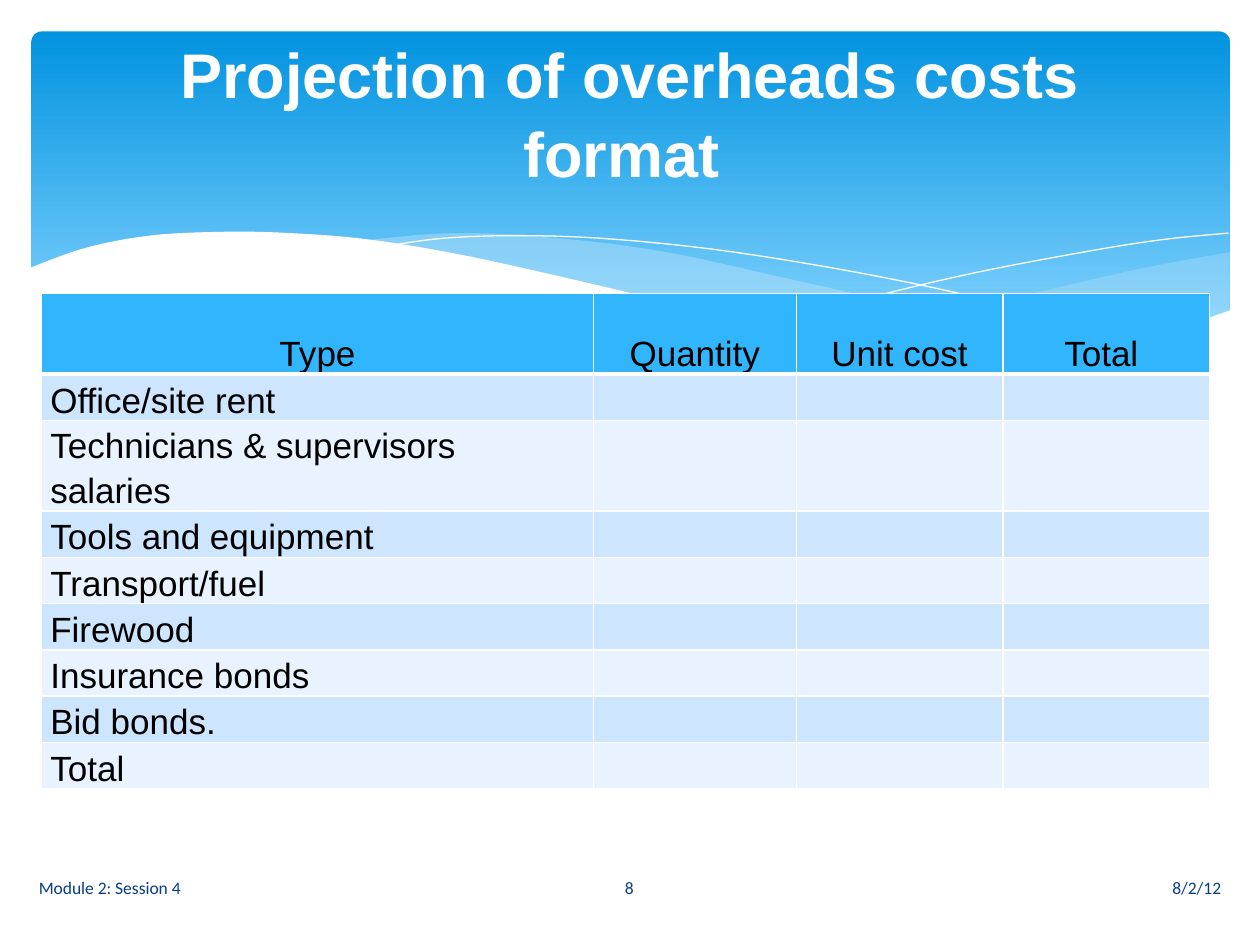
from collections import namedtuple
from dataclasses import dataclass

from lxml.etree import SubElement
from pptx import Presentation
from pptx.dml.color import RGBColor
from pptx.enum.shapes import MSO_SHAPE
from pptx.enum.text import MSO_ANCHOR, PP_ALIGN
from pptx.oxml.ns import qn
from pptx.util import Inches, Pt

COLS, ROWS = 100, 75
WIDE, HIGH = Inches(10), Inches(7.5)
Box = namedtuple("Box", "x y w h")


@dataclass(frozen=True)
class Theme:
    white: str = "FFFFFF"
    black: str = "000000"
    deep: str = "0293E0"
    sky: str = "83D3FE"
    mist: str = "C6E7FC"
    navy: str = "073E87"
    head: str = "31B6FD"
    bands: tuple = ("CEE5FE", "E8F3FF")
    sans: str = "Arial"
    small: str = "Calibri"
    title: int = 36
    body: int = 20
    note: int = 10


THEME = Theme()

# Edges of the waves, in grid cells from the corner of the banner
RIGHT = ([(63.6, 24), (72.8, 22.3), (80.7, 20.5), (88.1, 18.8), (95.1, 17.5)],
         [(95.1, 22.2), (90.3, 23.8), (84.7, 24.9), (77.8, 25.3),
          (70.7, 24.9), (63.6, 24)])
MIDDLE = ([(26.1, 16.6), (33.6, 16), (41.7, 16.4), (50.3, 17.5), (60.4, 19.7),
           (71.6, 22.2), (78.2, 23.5), (86.8, 24.8)],
          [(86.8, 24.8), (77.1, 25.3), (68.4, 24.7), (59.3, 23.3),
           (50.5, 21.5), (42.4, 19.7), (33.7, 17.8), (26.1, 16.6)])
FALL = [(28.4, 17), (32.8, 16.4), (39.1, 16.2), (46.4, 16.5), (55.7, 17.5),
        (67, 19.4), (77, 21.6), (88.2, 24.7)]
RISE = [(58.8, 23.2), (67, 21), (75.1, 19.1), (84.1, 17.4), (89.9, 16.5),
        (95, 16)]
FRONT = ([(95.2, 22.1), (89.5, 24), (83.8, 24.9), (78.4, 25.2), (70.1, 24.7),
          (60.1, 23.3), (50.4, 21.4), (42.2, 19.5), (34, 17.7), (26.7, 16.5),
          (20.5, 16), (15.2, 15.9), (9.4, 16.2), (4.2, 17.2), (-0.2, 18.8)],
         [(-0.2, 30.4), (95.2, 30.4)])

HEADS = ["Type", "Quantity", "Unit cost", "Total "]
ITEMS = ["Office/site rent", "Technicians & supervisors salaries",
         "Tools and equipment", "Transport/fuel", "Firewood",
         "Insurance bonds", "Bid bonds.", "Total"]


def across(n):
    return round(n * WIDE / COLS)


def down(n):
    return round(n * HIGH / ROWS)


def place(box):
    return across(box.x), down(box.y), across(box.w), down(box.h)


def color(code):
    return RGBColor.from_string(code)


def write(frame, text, size=THEME.body, ink=THEME.black, font=THEME.sans,
          bold=False, align=PP_ALIGN.LEFT, gap=None):
    para = frame.paragraphs[0]
    para.alignment = align
    para.line_spacing = gap
    run = para.add_run()
    run.text = text
    run.font.size, run.font.name, run.font.bold = Pt(size), font, bold
    run.font.color.rgb = color(ink)


def label(slide, box, text, side=1, foot=0.5, **style):
    frame = slide.shapes.add_textbox(*place(box)).text_frame
    frame.word_wrap = True
    frame.vertical_anchor = MSO_ANCHOR.MIDDLE
    frame.margin_left = frame.margin_right = across(side)
    frame.margin_top, frame.margin_bottom = 0, down(foot)
    write(frame, text, **style)


def smooth(keys, steps=6):
    """Points of a Catmull-Rom curve through the keys."""
    pads = [keys[0], *keys, keys[-1]]
    curve = [keys[0]]
    for a, b, c, d in zip(pads, pads[1:], pads[2:], pads[3:]):
        for t in (i / steps for i in range(1, steps + 1)):
            curve.append(tuple(
                q + t * (r - p) / 2 + t * t * (2 * p - 5 * q + 4 * r - s) / 2
                + t ** 3 * (3 * q - p - 3 * r + s) / 2
                for p, q, r, s in zip(a, b, c, d)))
    return curve


def wave(slide, box, points, fill=None, alpha=100):
    spots = [(across(box.x + x), down(box.y + y)) for x, y in points]
    pen = slide.shapes.build_freeform(*spots[0])
    pen.add_line_segments(spots[1:], close=bool(fill))
    shape = pen.convert_to_shape()
    shape.shadow.inherit = False
    if fill:
        shape.fill.solid()
        shape.fill.fore_color.rgb = color(fill)
        tint = shape.fill._xPr.find(".//" + qn("a:srgbClr"))
        SubElement(tint, qn("a:alpha"), val=str(alpha * 1000))
        shape.line.fill.background()
    else:
        shape.fill.background()
        shape.line.color.rgb = color(THEME.white)
        shape.line.width = Pt(0)


def banner(slide, box):
    # Gradient panel
    panel = slide.shapes.add_shape(MSO_SHAPE.ROUNDED_RECTANGLE, *place(box))
    panel.adjustments[0] = 0.03
    panel.shadow.inherit = False
    panel.line.fill.background()
    panel.fill.gradient()
    panel.fill.gradient_angle = 270
    stops = zip(panel.fill.gradient_stops, (THEME.deep, THEME.sky), (0, 0.9))
    for stop, code, spot in stops:
        stop.color.rgb, stop.position = color(code), spot
    # Sheer waves, thin lines, white front wave
    for (top, base), alpha in ((RIGHT, 29), (MIDDLE, 40)):
        wave(slide, box, smooth(top) + smooth(base), THEME.mist, alpha)
    for line in (FALL, RISE):
        wave(slide, box, smooth(line))
    wave(slide, box, smooth(FRONT[0]) + FRONT[1], THEME.white)


def border(cell, foot):
    props = cell._tc.get_or_add_tcPr()
    for side, width in (("L", 1), ("R", 1), ("T", 1), ("B", foot)):
        line = SubElement(props, qn("a:ln" + side), w=str(Pt(width)))
        fill = SubElement(line, qn("a:solidFill"))
        SubElement(fill, qn("a:srgbClr"), val=THEME.white)


def costs(slide, box):
    data = [HEADS] + [[item, "", "", ""] for item in ITEMS]
    table = slide.shapes.add_table(len(data), len(HEADS), *place(box)).table
    for col, width in zip(table.columns, (43.8, 16.1, 16.4, 16.4)):
        col.width = across(width)
    for r, (row, texts) in enumerate(zip(table.rows, data)):
        row.height = down({0: 6.4, 2: 7.2}.get(r, 3.67))
        for cell, text in zip(row.cells, texts):
            cell.margin_left = cell.margin_right = across(0.7)
            cell.margin_top = cell.margin_bottom = 0
            cell.vertical_anchor = MSO_ANCHOR.BOTTOM
            border(cell, 1 if r else 3)
            cell.fill.solid()
            cell.fill.fore_color.rgb = color(
                THEME.bands[(r - 1) % 2] if r else THEME.head)
            if text:
                write(cell.text_frame, text, gap=1.15,
                      align=PP_ALIGN.LEFT if r else PP_ALIGN.CENTER)


def footer(slide, box):
    parts = (("Module 2: Session 4", 0, 41.4, PP_ALIGN.LEFT),
             ("8", 41.5, 12.7, PP_ALIGN.CENTER),
             ("8/2/12", 54.4, 41.4, PP_ALIGN.RIGHT))
    for text, left, width, align in parts:
        label(slide, Box(box.x + left, box.y, width, box.h), text, foot=0,
              size=THEME.note, ink=THEME.navy, font=THEME.small, align=align)


def main():
    deck = Presentation()
    deck.slide_width, deck.slide_height = WIDE, HIGH
    slide = deck.slides.add_slide(deck.slide_layouts[6])
    banner(slide, Box(2.5, 2.5, 95.1, 27))
    costs(slide, Box(3.3, 23.3, 92.7, 39.3))
    label(slide, Box(5, 3.7, 90, 13.7), "Projection of overheads costs format ",
          side=2, foot=3.4, size=THEME.title, ink=THEME.white, bold=True,
          align=PP_ALIGN.CENTER, gap=1.04)
    footer(slide, Box(2.1, 68.4, 95.8, 4))
    deck.save("out.pptx")


if __name__ == "__main__":
    main()
